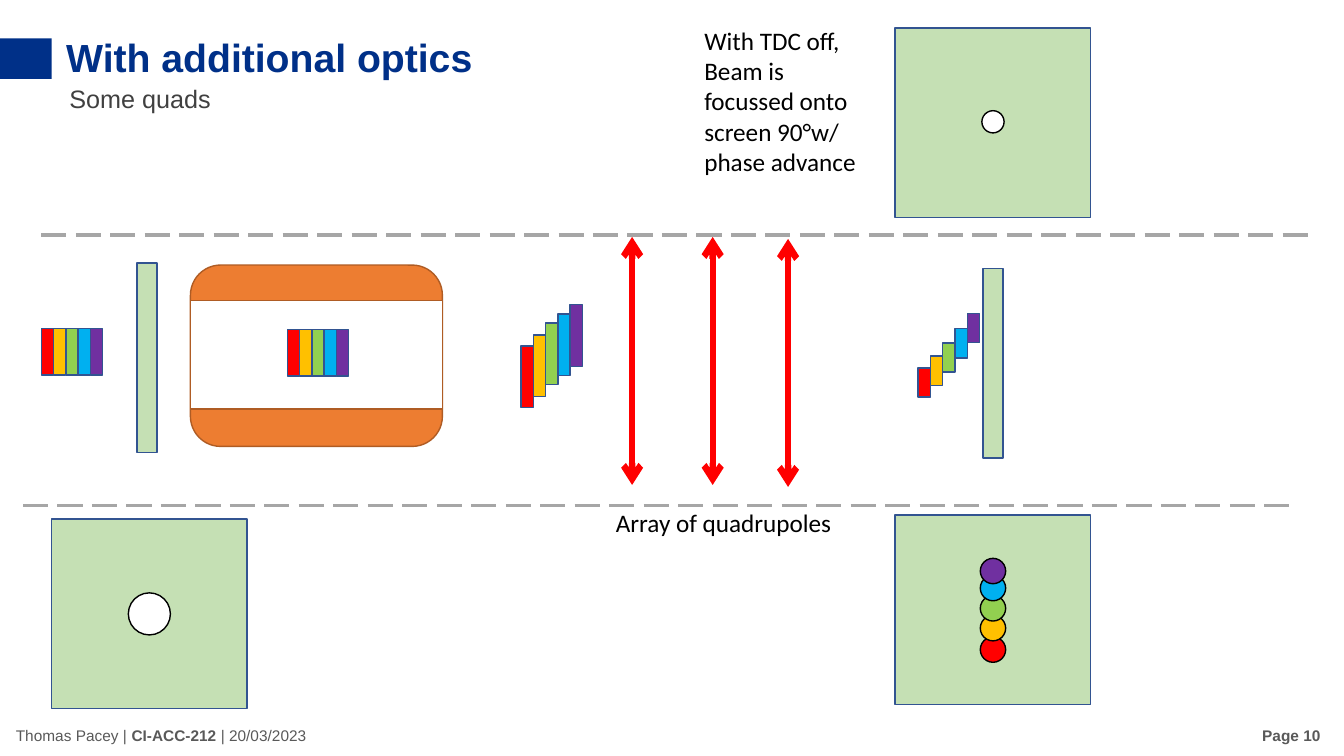
from lxml.etree import SubElement
from pptx import Presentation
from pptx.dml.color import RGBColor
from pptx.enum.dml import MSO_LINE
from pptx.enum.shapes import MSO_CONNECTOR, MSO_SHAPE
from pptx.enum.text import MSO_ANCHOR, PP_ALIGN
from pptx.oxml.ns import qn
from pptx.util import Cm, Pt

NAVY, GREY, RED, WHITE = "003088", "595959", "FF0000", "FFFFFF"
GREEN, OUTLINE, ORANGE, BROWN = "C5E0B4", "325491", "ED7D31", "AF5C24"
SLICE_COLOURS = [RED, "FFC000", "92D050", "00B0F0", "7030A0"]
SLICE_WIDTH = 0.31
SCREEN_WIDTH, SCREEN_HEIGHT, SCREEN_DEPTH = 4.93, 4.78, 0.51


def colour(value):
    return RGBColor.from_string(value)


def add_text(page, box, paras, size=18, font="Calibri", ink="000000", bold=False,
             align=PP_ALIGN.LEFT, anchor=MSO_ANCHOR.TOP, wrap=True):
    """Each paragraph is a string or a list of (text, bold) pairs."""
    frame = page.shapes.add_textbox(*map(Cm, box)).text_frame
    frame.word_wrap = wrap
    frame.vertical_anchor = anchor
    for index, content in enumerate(paras):
        para = frame.paragraphs[0] if index == 0 else frame.add_paragraph()
        para.alignment = align
        spans = [(content, bold)] if isinstance(content, str) else content
        for text, heavy in spans:
            span = para.add_run()
            span.text = text
            span.font.size = Pt(size)
            span.font.name = font
            span.font.bold = heavy
            span.font.color.rgb = colour(ink)


def add_block(page, kind, box, fill, line=None):
    shape = page.shapes.add_shape(kind, *map(Cm, box))
    shape.shadow.inherit = False
    shape.fill.solid()
    shape.fill.fore_color.rgb = colour(fill)
    if line:
        shape.line.color.rgb = colour(line)
        shape.line.width = Pt(1)
    else:
        shape.line.fill.background()


def add_line(page, start, end, ink, width, dash=None, arrows=False):
    line = page.shapes.add_connector(MSO_CONNECTOR.STRAIGHT, *map(Cm, start + end))
    line.line.color.rgb = colour(ink)
    line.line.width = Pt(width)
    if dash:
        line.line.dash_style = dash
    if arrows:
        outline = line.line._get_or_add_ln()
        for end_name in ("headEnd", "tailEnd"):
            SubElement(outline, qn("a:" + end_name), type="arrow")
    SubElement(line._element.spPr, qn("a:effectLst"))


def add_header(page, left, top):
    add_block(page, MSO_SHAPE.RECTANGLE, (left, top + 0.26, 1.3, 1.02), NAVY)
    add_text(page, (left + 1.42, top, 10.87, 1.45), ["With additional optics"],
             size=28, font="Arial", ink=NAVY, bold=True, wrap=False)
    add_text(page, (left + 1.5, top + 1.27, 15.52, 1.02), ["Some quads"],
             font="Arial", ink="404040")


def add_footer(page, left, top, width, height):
    style = {"size": 11, "font": "Arial", "ink": GREY, "anchor": MSO_ANCHOR.MIDDLE}
    credit = [("Thomas Pacey | ", False), ("CI-ACC-212 ", True), ("| 20/03/2023", False)]
    add_text(page, (left, top, 10.29, height), [credit], **style)
    add_text(page, (left + width - 7.62, top, 7.62, height), ["Page 10"],
             bold=True, align=PP_ALIGN.RIGHT, **style)


def add_bunch(page, left, top, height, rises=(0, 0, 0, 0, 0)):
    """Slices side by side, each lifted above the first by its rise."""
    for index, (fill, rise) in enumerate(zip(SLICE_COLOURS, rises)):
        box = (left + index * SLICE_WIDTH, top - rise, SLICE_WIDTH, height)
        add_block(page, MSO_SHAPE.RECTANGLE, box, fill, OUTLINE)


def add_cavity(page, left, top, width, height):
    add_block(page, MSO_SHAPE.ROUNDED_RECTANGLE, (left, top, width, height), ORANGE, BROWN)
    add_block(page, MSO_SHAPE.RECTANGLE, (left, top + 0.89, width, 2.74), WHITE, BROWN)
    add_bunch(page, left + 2.44, top + 1.63, 1.17)


def add_screen(page, left, top, spots):
    """Front view; each spot is (diameter, offset below the centre, fill)."""
    add_block(page, MSO_SHAPE.RECTANGLE, (left, top, SCREEN_WIDTH, SCREEN_HEIGHT),
              GREEN, OUTLINE)
    for size, offset, fill in spots:
        box = (left + (SCREEN_WIDTH - size) / 2,
               top + (SCREEN_HEIGHT - size) / 2 + offset, size, size)
        add_block(page, MSO_SHAPE.OVAL, box, fill, "000000")


def add_side_screen(page, left, top):
    add_block(page, MSO_SHAPE.RECTANGLE, (left, top, SCREEN_DEPTH, SCREEN_HEIGHT),
              GREEN, OUTLINE)


def add_quadrupoles(page, left, top, height):
    for across, down in ((0, 0), (2.03, 0), (3.93, 0.05)):
        x, y = left + across, top + down
        add_line(page, (x, y), (x, y + height), RED, 4.5, arrows=True)


def add_beamline(page, left, top):
    # Bunch, first screen and deflecting cavity
    add_bunch(page, left, top + 2.36, 1.17)
    add_side_screen(page, left + 2.41, top + 0.71)
    add_cavity(page, left + 3.76, top + 0.76, 6.35, 4.57)
    # Streaked bunch, quadrupoles and final screen
    add_bunch(page, left + 12.09, top + 2.8, 1.55, (0, 0.28, 0.58, 0.81, 1.04))
    add_quadrupoles(page, left + 14.89, top + 0.05, 6.25)
    add_bunch(page, left + 22.1, top + 3.35, 0.74, (0, 0.3, 0.63, 0.99, 1.37))
    add_side_screen(page, left + 23.73, top + 0.84)
    # Dashed borders
    for x, y in ((left, top), (left - 0.46, top + 6.81)):
        add_line(page, (x, y), (x + 31.98, y), "A6A6A6", 2.25, dash=MSO_LINE.LONG_DASH)


def add_screen_views(page):
    streak_offsets = (1.0, 0.46, -0.04, -0.55, -0.98)
    streak = [(0.64, offset, fill) for offset, fill in zip(streak_offsets, SLICE_COLOURS)]
    add_screen(page, 1.3, 13.08, [(1.06, 0, WHITE)])
    add_screen(page, 22.56, 0.71, [(0.56, -0.03, WHITE)])
    add_screen(page, 22.56, 12.98, streak)


def add_labels(page):
    add_text(page, (15.27, 12.67, 6.17, 1.02), ["Array of quadrupoles"])
    add_text(page, (17.5, 0.51, 4.65, 4.11),
             ["With TDC off,", "Beam is focussed onto screen 90°w/ phase advance"])


def main():
    deck = Presentation()
    deck.slide_width, deck.slide_height = Cm(33.87), Cm(19.05)
    page = deck.slides.add_slide(deck.slide_layouts[6])
    add_footer(page, 0.15, 18.03, 33.38, 1.02)
    add_header(page, 0, 0.71)
    add_beamline(page, 1.04, 5.92)
    add_screen_views(page)
    add_labels(page)
    deck.save("out.pptx")


if __name__ == "__main__":
    main()
